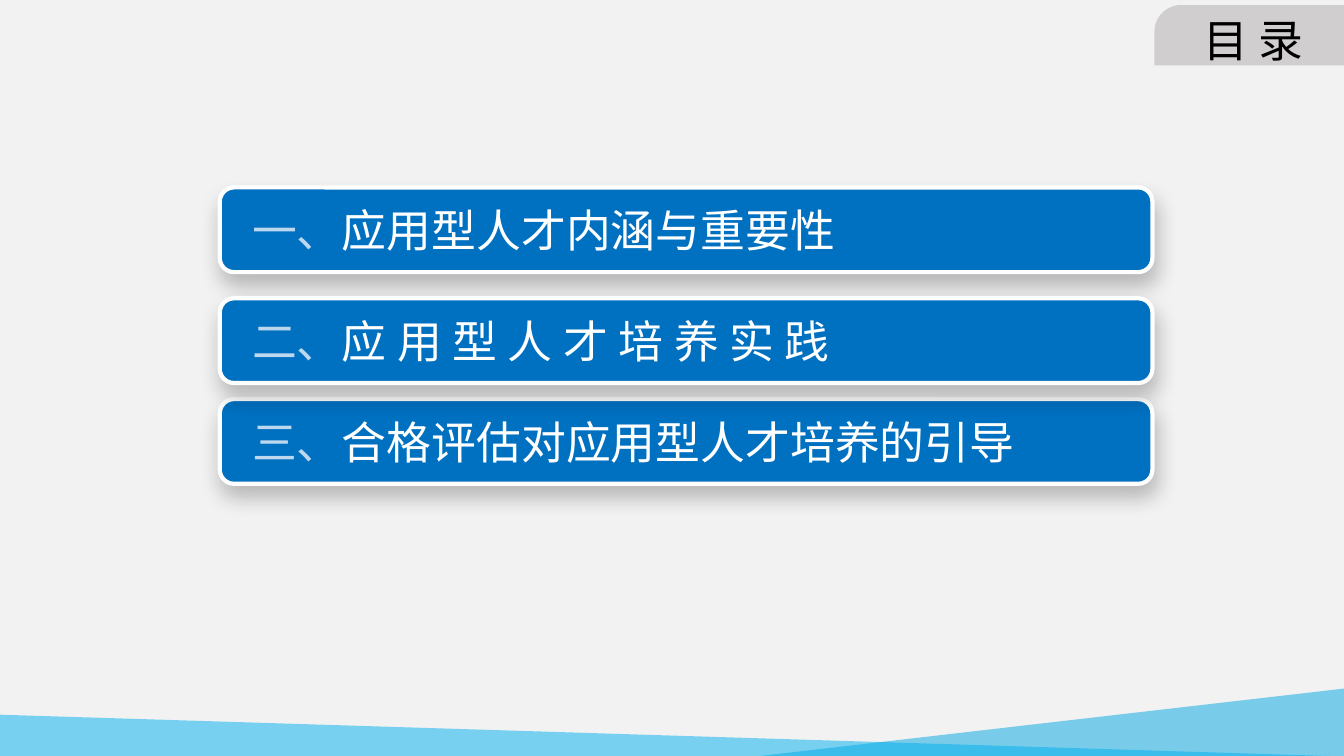
from lxml import etree
from pptx import Presentation
from pptx.dml.color import RGBColor
from pptx.enum.shapes import MSO_SHAPE as Shape
from pptx.enum.text import MSO_ANCHOR as Anchor, PP_ALIGN as Align
from pptx.oxml import parse_xml
from pptx.oxml.ns import nsdecls, qn
from pptx.util import Inches, Pt

BACKGROUND = RGBColor(0xF2, 0xF2, 0xF2)
DEEP_SKY = RGBColor(0x00, 0xA7, 0xE2)
SKY = RGBColor(0x00, 0xB0, 0xF0)
BLUE = RGBColor(0x00, 0x70, 0xC0)
PALE_BLUE = RGBColor(0xBD, 0xD7, 0xEE)
GREY = RGBColor(0xD0, 0xCE, 0xCE)
WHITE = RGBColor(0xFF, 0xFF, 0xFF)
BLACK = RGBColor(0x00, 0x00, 0x00)
FONT = "Noto Sans CJK SC"

SHADOW = (
    f'<a:effectLst {nsdecls("a")}>'
    f'<a:outerShdw blurRad="{Pt(15)}" dist="{Pt(8)}" dir="{80 * 60000}" rotWithShape="0">'
    '<a:srgbClr val="000000"><a:alpha val="24000"/></a:srgbClr>'
    '</a:outerShdw></a:effectLst>'
)


def add_filled(kind, left, top, width, height, color):
    shape = slide.shapes.add_shape(
        kind, Inches(left), Inches(top), Inches(width), Inches(height))
    shape.shadow.inherit = False
    shape.fill.solid()
    shape.fill.fore_color.rgb = color
    shape.line.fill.background()
    return shape


def set_font(paragraph):
    """Set size and typeface, for Chinese characters as well."""
    paragraph.font.size = Pt(32)
    paragraph.font.name = FONT
    for span in paragraph.runs:
        east_asian = etree.SubElement(span.font._element, qn("a:ea"))
        east_asian.set("typeface", FONT)


deck = Presentation()
deck.slide_width = Inches(13.33)
deck.slide_height = Inches(7.5)
slide = deck.slides.add_slide(deck.slide_layouts[5])
slide.background.fill.solid()
slide.background.fill.fore_color.rgb = BACKGROUND

# Footer wedges
right_wedge = add_filled(Shape.RIGHT_TRIANGLE, 7.45, 6.83, 5.89, 0.68, DEEP_SKY)
right_wedge._element.spPr.find(qn("a:xfrm")).set("flipH", "1")
left_wedge = add_filled(Shape.RIGHT_TRIANGLE, 0, 7.09, 13.18, 0.41, SKY)
for wedge in (right_wedge, left_wedge):
    color = wedge._element.spPr.find(qn("a:solidFill"))[0]
    etree.SubElement(color, qn("a:alpha")).set("val", "50000")

# Agenda bars, back to front: top, number, heading, letter spacing in points
agenda = [
    (1.86, "一、", "应用型人才内涵与重要性", 0),
    (3.96, "三、", "合格评估对应用型人才培养的引导", 0),
    (2.96, "二、", "应用型人才培养实践", 7.5),
]
for top, number, heading, spacing in agenda:
    bar = add_filled(Shape.ROUNDED_RECTANGLE, 2.18, top, 9.25, 0.84, BLUE)
    bar.line.color.rgb = WHITE
    bar.line.width = Pt(3)
    properties = bar._element.spPr
    properties.replace(properties.find(qn("a:effectLst")), parse_xml(SHADOW))

    frame = bar.text_frame
    frame.margin_left = Inches(0.28)
    frame.vertical_anchor = Anchor.MIDDLE
    para = frame.paragraphs[0]
    para.alignment = Align.LEFT
    for text, color in ((number, PALE_BLUE), (heading, WHITE)):
        span = para.add_run()
        span.text = text
        span.font.color.rgb = color
    if spacing:
        span.font._element.set("spc", str(int(spacing * 100)))
    set_font(para)

# Title on its corner tab
tab = add_filled(Shape.SNIP_ROUND_RECTANGLE, 11.45, 0.05, 1.88, 0.6, GREY)
tab.adjustments[0] = 0.44
tab.adjustments[1] = 0

title = slide.shapes.title
title.left, title.top = Inches(11.53), Inches(0.13)
title.width, title.height = Inches(1.8), Inches(0.52)
slide.shapes._spTree.append(title._element)
title.text_frame.text = "目 录"
title.text_frame.vertical_anchor = Anchor.MIDDLE
title_para = title.text_frame.paragraphs[0]
title_para.alignment = Align.CENTER
title_para.font.color.rgb = BLACK
set_font(title_para)

deck.save("out.pptx")
